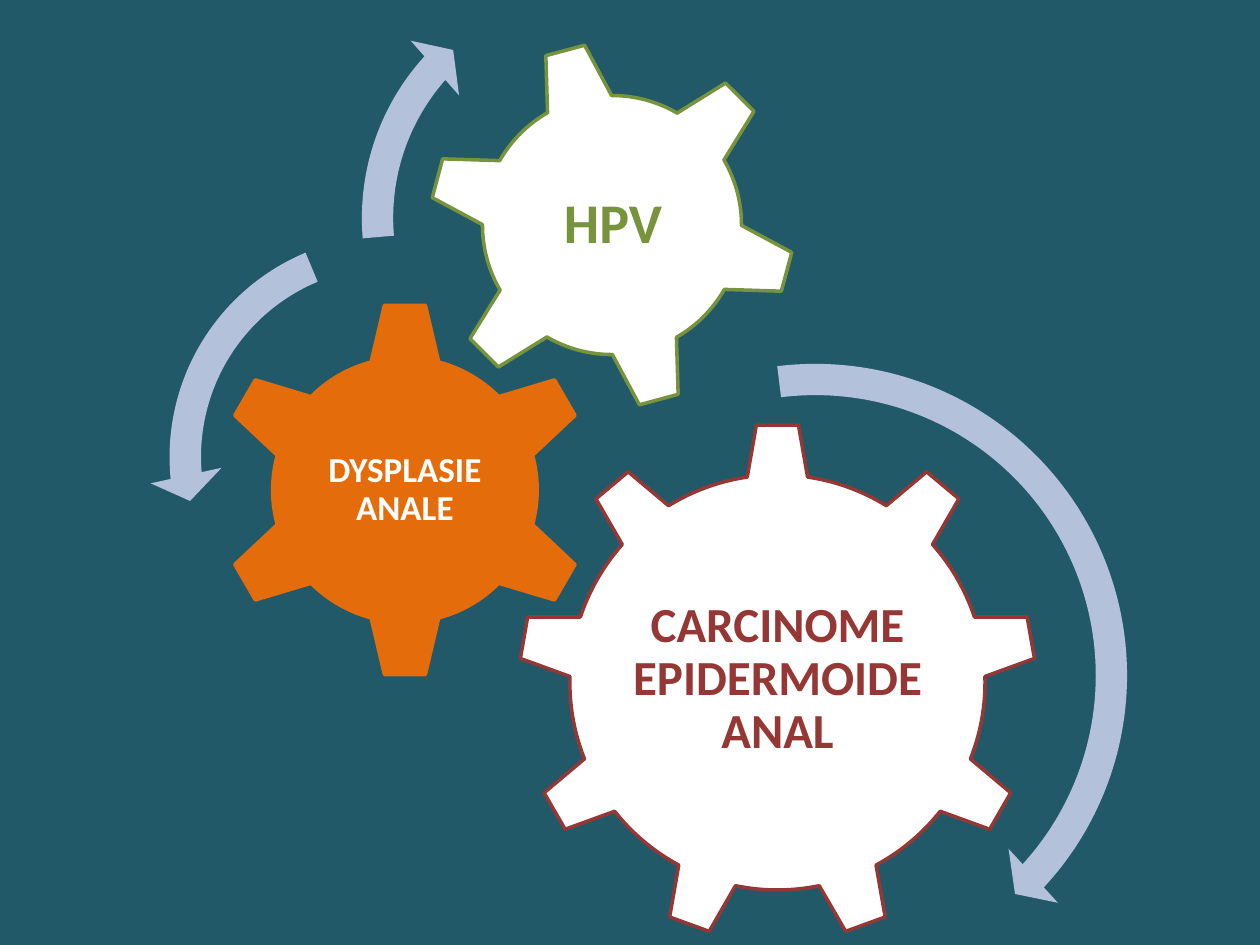
from dataclasses import dataclass
from pptx import Presentation
from pptx.dml.color import RGBColor as RGB
from pptx.enum.shapes import MSO_SHAPE as Kind
from pptx.enum.text import MSO_ANCHOR as Anchor, PP_ALIGN as Align
from pptx.util import Pt

SCALE = 914400 / 126


@dataclass(frozen=True)
class Theme:
    back: str = "215968"
    white: str = "FFFFFF"
    red: str = "953735"
    orange: str = "E46C0A"
    green: str = "77933C"
    arrow: str = "B3C1DB"
    font: str = "Calibri"
    large: int = 32
    mid: int = 28
    small: int = 20
    edge: int = 2


THEME = Theme()


def px(n):
    return round(n * SCALE)


def style(item, values):
    for name, value in values.items():
        setattr(item, name, value)


def paint(fill, color):
    fill.solid()
    fill.fore_color.rgb = RGB.from_string(color)


def add_form(slide, kind, left, top, size, color):
    form = slide.shapes.add_shape(kind, px(left), px(top), px(size), px(size))
    form.shadow.inherit = False
    paint(form.fill, color)
    return form


def add_gear(slide, kind, left, top, size, color, edge, turn=0):
    gear = add_form(slide, kind, left, top, size, color)
    paint(gear.line.fill, edge)
    style(gear.line, {"width": Pt(THEME.edge)})
    style(gear, {"rotation": turn})


def add_label(slide, box, text, size, color, inset):
    frame = slide.shapes.add_textbox(*map(px, box)).text_frame
    style(frame, {"word_wrap": True, "vertical_anchor": Anchor.MIDDLE})
    sides = ("left", "top", "right", "bottom")
    style(frame, {f"margin_{side}": px(inset) for side in sides})
    para = frame.paragraphs[0]
    style(para, {"alignment": Align.CENTER, "line_spacing": 0.9})
    run = para.add_run()
    run.text = text
    style(run.font, {"name": THEME.font, "size": Pt(size), "bold": True})
    run.font.color.rgb = RGB.from_string(color)


def add_arrow(slide, kind, left, top, size, curve):
    arrow = add_form(slide, kind, left, top, size, THEME.arrow)
    arrow.line.fill.background()
    for i, value in enumerate(curve):
        arrow.adjustments[i] = value


def main():
    deck = Presentation()
    style(deck, {"slide_width": px(1260), "slide_height": px(945)})
    slide = deck.slides.add_slide(deck.slide_layouts[6])
    paint(slide.background.fill, THEME.back)

    add_gear(slide, Kind.GEAR_9, 518, 423, 519, THEME.white, THEME.red)
    add_label(slide, (622, 546, 311, 267), "CARCINOME EPIDERMOIDE ANAL",
              THEME.mid, THEME.red, 5)
    add_gear(slide, Kind.GEAR_6, 216, 301, 378, THEME.orange, THEME.orange)
    add_label(slide, (311, 397, 188, 186), "DYSPLASIE ANALE",
              THEME.small, THEME.white, 4)
    add_gear(slide, Kind.GEAR_6, 427, 40, 370, THEME.white, THEME.green, 345)
    add_label(slide, (509, 121, 208, 208), "HPV",
              THEME.large, THEME.green, 5)

    add_arrow(slide, Kind.CIRCULAR_ARROW, 483, 343, 665,
              (0.047, 2.99, 25.57, 157.77, 0.055))
    add_arrow(slide, Kind.LEFT_CIRCULAR_ARROW, 149, 215, 484,
              (0.065, 4.3, 104.89, 148.38, 0.075))
    add_arrow(slide, Kind.CIRCULAR_ARROW, 341, -43, 522,
              (0.06, 3.94, 133.14, 105.08, 0.07))
    deck.save("out.pptx")


if __name__ == "__main__":
    main()
